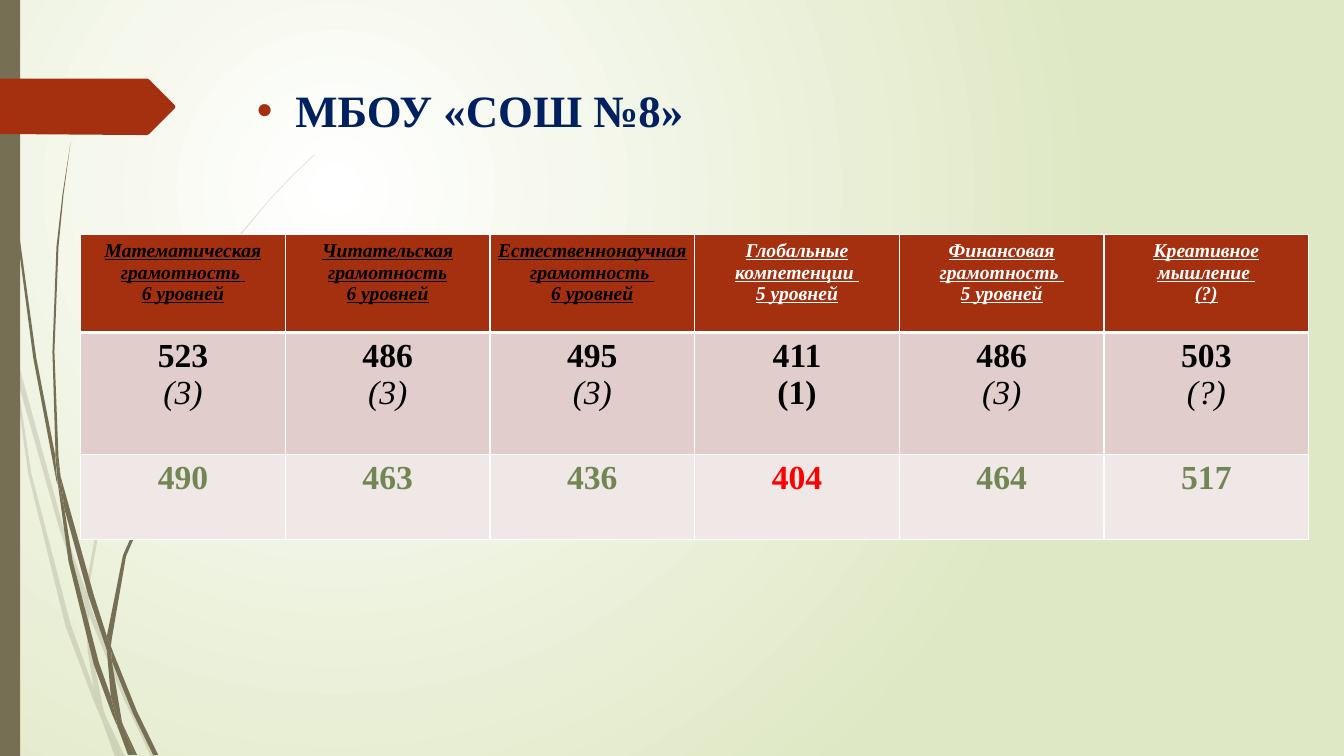
from lxml.etree import SubElement
from pptx import Presentation
from pptx.dml.color import RGBColor
from pptx.enum.shapes import MSO_SHAPE as Preset
from pptx.enum.text import PP_ALIGN as Align
from pptx.oxml.ns import qn
from pptx.util import Pt

PX = 9144
SERIF = "Times New Roman"
OLIVE, RUST, WHITE, BLACK = "766F54", "A53010", "FFFFFF", "000000"
GREEN, RED, NAVY = "728653", "FF0000", "002060"

PALE_STALKS = [
    [(11, 350), (9, 322), (0, 282), (0, 299), (10, 344)],
    [(58, 522), (84, 599), (85, 586), (62, 520), (14, 345), (17, 376)],
    [(92, 607), (88, 596), (88, 610), (123, 694), (150, 751), (155, 751), (127, 692)],
    [(119, 751), (124, 751), (105, 711)],
    [(93, 683), (70, 619), (31, 469), (17, 376), (11, 350), (28, 470), (65, 621),
     (92, 693), (101, 714), (99, 707)],
    [(84, 599), (87, 646), (93, 683), (96, 692), (105, 711), (103, 706), (91, 646),
     (88, 610), (88, 608)],
    [(88, 584), (110, 462), (160, 349), (229, 245), (268, 198), (290, 175), (312, 154),
     (312, 153), (289, 175), (268, 197), (228, 244), (158, 348), (107, 461), (85, 584),
     (85, 586), (88, 596)],
    [(101, 714), (114, 751), (119, 751)],
    [(88, 608), (88, 610), (88, 596), (85, 586), (84, 599)],
    [(96, 692), (93, 683), (99, 707), (101, 714), (119, 751), (105, 711)],
]
DARK_STALKS = [
    [(7, 110), (17, 233), (33, 355), (56, 477), (57, 481), (55, 457), (55, 453),
     (36, 355), (19, 232), (8, 109), (5, 48), (4, 0), (3, 0), (4, 48)],
    [(88, 592), (106, 645), (106, 633), (106, 631), (93, 590), (60, 472), (64, 505)],
    [(113, 649), (110, 641), (111, 656), (132, 708), (152, 749), (157, 749), (136, 706)],
    [(110, 691), (98, 657), (72, 556), (64, 505), (57, 477), (68, 557), (93, 659),
     (111, 708), (117, 722), (116, 717)],
    [(60, 472), (58, 453), (54, 349), (58, 245), (63, 193), (70, 141), (62, 193),
     (56, 245), (52, 349), (55, 449)],
    [(133, 749), (136, 749), (122, 719)],
    [(57, 477), (64, 505), (60, 472), (55, 449), (55, 453)],
    [(111, 633), (125, 552), (158, 476), (205, 406), (231, 374), (245, 359), (261, 344),
     (260, 344), (245, 358), (231, 373), (204, 405), (156, 474), (122, 551), (106, 631),
     (110, 641)],
    [(117, 722), (127, 749), (131, 749)],
    [(106, 645), (110, 691), (116, 706), (122, 719), (121, 716), (111, 656), (109, 651)],
    [(106, 645), (109, 651), (111, 656), (110, 641), (106, 631), (106, 633)],
    [(116, 706), (110, 691), (116, 717), (117, 722), (130, 749), (133, 749), (122, 719)],
]
RIBBON = [(173, 108), (148, 133), (146, 134), (136, 134), (0, 133), (0, 78), (146, 78),
          (148, 79), (173, 104), (174, 106)]

HEADINGS = [
    ("Математическая грамотность ", "6 уровней", BLACK),
    ("Читательская грамотность", "6 уровней", BLACK),
    ("Естественнонаучная грамотность ", "6 уровней", BLACK),
    ("Глобальные компетенции ", "5 уровней", WHITE),
    ("Финансовая грамотность ", "5 уровней", WHITE),
    ("Креативное мышление ", "(?)", WHITE),
]
SCORES = [("523", "(3)"), ("486", "(3)"), ("495", "(3)"), ("411", "(1)"), ("486", "(3)"),
          ("503", "(?)")]
AVERAGES = ["490", "463", "436", "404", "464", "517"]

HEADING = {"name": SERIF, "size": Pt(14), "bold": True, "italic": True, "underline": True}
SCORE = {"name": SERIF, "size": Pt(24), "bold": True, "italic": False}
LEVEL = {**SCORE, "bold": False, "italic": True}
TITLE = {"name": SERIF, "size": Pt(32), "bold": True}


def rgb(color):
    return RGBColor.from_string(color)


def px(*lengths):
    return [length * PX for length in lengths]


def paint(shape, color, opacity=100):
    shape.shadow.inherit = False
    shape.fill.solid()
    shape.fill.fore_color.rgb = rgb(color)
    shape.line.fill.background()
    if opacity < 100:
        tint = shape.fill._xPr.find(qn("a:solidFill"))[0]
        SubElement(tint, qn("a:alpha"), val=str(opacity * 1000))


def add_outline(shapes, points, color, opacity=100):
    builder = shapes.build_freeform(*points[0], scale=PX)
    builder.add_line_segments(points[1:], close=True)
    paint(builder.convert_to_shape(), color, opacity)


def add_stalks(slide, stalks, opacity):
    bunch = slide.shapes.add_group_shape()
    for points in stalks:
        add_outline(bunch.shapes, points, OLIVE, opacity)


def write(paragraph, text, style, color):
    run = paragraph.add_run()
    run.text = text
    for key, value in style.items():
        setattr(run.font, key, value)
    run.font.color.rgb = rgb(color)


def set_background(slide):
    fill = slide.background.fill
    fill.gradient()
    for stop, (position, color) in zip(fill.gradient_stops, [(0, WHITE), (1, "DFE8C4")]):
        stop.position = position
        stop.color.rgb = rgb(color)
    gradient = slide._element.find(".//" + qn("a:gradFill"))
    gradient.remove(gradient.find(qn("a:lin")))
    glow = SubElement(gradient, qn("a:path"), path="circle")
    SubElement(glow, qn("a:fillToRect"), l="50000", t="50000", r="100000", b="100000")


def add_title(slide, text):
    frame = slide.shapes.add_textbox(*px(245, 77, 579, 64)).text_frame
    frame.word_wrap = True
    paragraph = frame.paragraphs[0]
    paragraph.space_before = Pt(10)
    write(paragraph, text, TITLE, NAVY)
    layout = paragraph._p.get_or_add_pPr()
    layout.set("marL", str(38 * PX))
    layout.set("indent", str(-38 * PX))
    bullet_color = SubElement(layout, qn("a:buClr"))
    SubElement(bullet_color, qn("a:srgbClr"), val=RUST)
    SubElement(layout, qn("a:buFont"), typeface="Arial")
    SubElement(layout, qn("a:buChar"), char="•")


def fill_cell(cell, lines, background, bottom=1):
    cell.margin_left, cell.margin_right, cell.margin_top, cell.margin_bottom = px(7, 7, 5, 5)
    for side, width in {"L": 1, "R": 1, "T": 1, "B": bottom}.items():
        edge = SubElement(cell._tc.get_or_add_tcPr(), qn("a:ln" + side), w=str(Pt(width)))
        SubElement(SubElement(edge, qn("a:solidFill")), qn("a:srgbClr"), val=WHITE)
    cell.fill.solid()
    cell.fill.fore_color.rgb = rgb(background)
    frame = cell.text_frame
    for index, line in enumerate(lines):
        paragraph = frame.add_paragraph() if index else frame.paragraphs[0]
        paragraph.alignment = Align.CENTER
        write(paragraph, *line)


def add_results(slide):
    heights = [97, 121, 84]
    columns = len(HEADINGS)
    area = px(80, 233, 203 * columns, sum(heights))
    table = slide.shapes.add_table(len(heights), columns, *area).table
    for row, height in zip(table.rows, px(*heights)):
        row.height = height
    for column, (heading, score, average) in enumerate(zip(HEADINGS, SCORES, AVERAGES)):
        skill, scale, color = heading
        result, level = score
        lowest = level == "(1)"
        fill_cell(table.cell(0, column),
                  [(skill, HEADING, color), (scale, HEADING, color)], RUST, bottom=3)
        fill_cell(table.cell(1, column),
                  [(result, SCORE, BLACK), (level, SCORE if lowest else LEVEL, BLACK)], "E1CDCC")
        fill_cell(table.cell(2, column),
                  [(average, SCORE, RED if lowest else GREEN)], "F0E8E7")


def main():
    deck = Presentation()
    deck.slide_width, deck.slide_height = px(1333, 750)
    slide = deck.slides.add_slide(deck.slide_layouts[6])
    set_background(slide)
    add_stalks(slide, PALE_STALKS, 20)
    add_stalks(slide, DARK_STALKS, 100)
    paint(slide.shapes.add_shape(Preset.RECTANGLE, *px(0, 0, 20, 750)), OLIVE)
    add_outline(slide.shapes, RIBBON, RUST)
    add_results(slide)
    add_title(slide, "МБОУ «СОШ №8»")
    deck.save("out.pptx")


if __name__ == "__main__":
    main()
